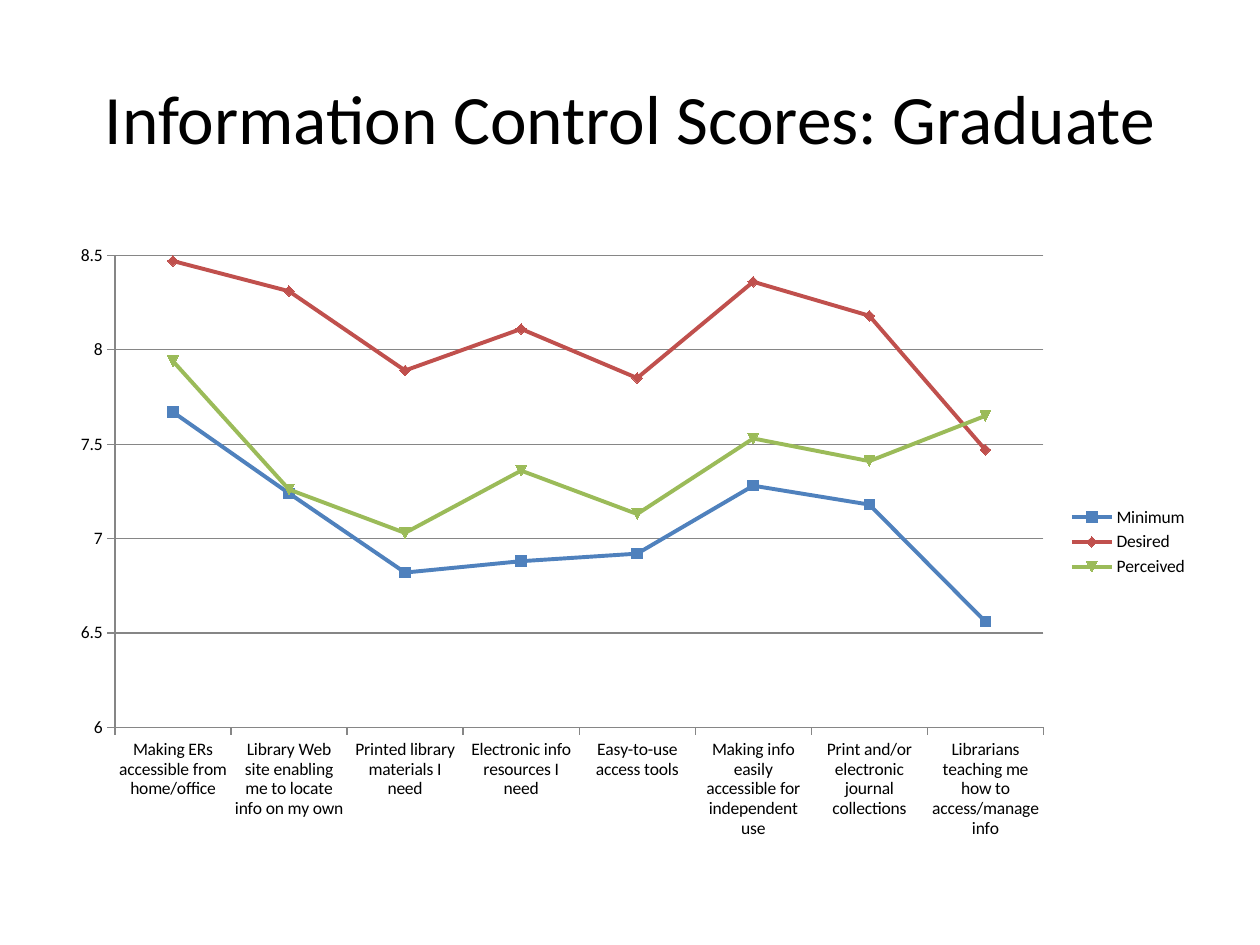
from pptx import Presentation
from pptx.chart.data import CategoryChartData
from pptx.dml.color import RGBColor
from pptx.enum.chart import XL_CHART_TYPE as ChartType
from pptx.enum.chart import XL_LEGEND_POSITION as LegendPosition
from pptx.enum.chart import XL_TICK_MARK as TickMark
from pptx.enum.text import MSO_ANCHOR as Anchor
from pptx.enum.text import PP_ALIGN as Align
from pptx.util import Cm, Pt

COLOURS = {
    "text": "000000",
    "axis": "868686",
    "Minimum": "4F81BD",
    "Desired": "C0504D",
    "Perceived": "9BBB59",
}
CATEGORIES = [
    "Making ERs accessible from home/office",
    "Library Web site enabling me to locate info on my own",
    "Printed library materials I need",
    "Electronic info resources I need",
    "Easy-to-use access tools",
    "Making info easily accessible for independent use",
    "Print and/or electronic journal collections",
    "Librarians teaching me how to access/manage info",
]
SCORES = {
    "Minimum": [7.67, 7.24, 6.82, 6.88, 6.92, 7.28, 7.18, 6.56],
    "Desired": [8.47, 8.31, 7.89, 8.11, 7.85, 8.36, 8.18, 7.47],
    "Perceived": [7.94, 7.26, 7.03, 7.36, 7.13, 7.53, 7.41, 7.65],
}


def colour(name):
    """Return the named colour."""
    return RGBColor.from_string(COLOURS[name])


def set_values(target, values):
    """Set each attribute of the target from a dict."""
    for name, value in values.items():
        setattr(target, name, value)


def style_font(font, size):
    """Give a font the slide's typeface and text colour."""
    set_values(font, {"name": "Calibri", "size": Pt(size)})
    font.color.rgb = colour("text")


def style_line(line, name, width):
    """Give a line its colour and width."""
    line.color.rgb = colour(name)
    line.width = Pt(width)


def fill_title(title, text):
    """Place the title placeholder and write its text."""
    set_values(title, {"left": Cm(1.27), "top": Cm(0.76),
                       "width": Cm(22.86), "height": Cm(3.18)})
    frame = title.text_frame
    set_values(frame, {"text": text, "word_wrap": True,
                       "vertical_anchor": Anchor.MIDDLE})
    para = frame.paragraphs[0]
    para.alignment = Align.CENTER
    style_font(para.runs[0].font, 39.6)


def style_axes(chart):
    """Set the score scale, gridlines and tick marks."""
    set_values(chart.value_axis, {
        "minimum_scale": 6, "maximum_scale": 8.5, "major_unit": 0.5,
        "has_major_gridlines": True})
    style_line(chart.value_axis.major_gridlines.format.line, "axis", 0.75)
    for axis in (chart.category_axis, chart.value_axis):
        axis.major_tick_mark = TickMark.OUTSIDE
        style_line(axis.format.line, "axis", 0.75)


def style_series(series):
    """Colour a score line and its markers."""
    series.smooth = False
    style_line(series.format.line, series.name, 2.25)
    series.marker.size = 6
    marker = series.marker.format
    marker.fill.solid()
    marker.fill.fore_color.rgb = colour(series.name)
    style_line(marker.line, series.name, 0.75)


def add_score_chart(page):
    """Add the line chart of the three score levels."""
    data = CategoryChartData()
    data.categories = CATEGORIES
    for name, scores in SCORES.items():
        data.add_series(name, scores)
    chart = page.shapes.add_chart(
        ChartType.LINE_MARKERS, Cm(1.17), Cm(4.7), Cm(23.04), Cm(12.45), data
    ).chart
    set_values(chart, {"has_title": False, "has_legend": True})
    set_values(chart.legend, {"position": LegendPosition.RIGHT,
                              "include_in_layout": False})
    style_font(chart.font, 10)
    style_axes(chart)
    chart.plots[0].vary_by_categories = False
    for series in chart.plots[0].series:
        style_series(series)


def main():
    """Build and save the slide."""
    deck = Presentation()
    set_values(deck, {"slide_width": Cm(25.4), "slide_height": Cm(19.05)})
    page = deck.slides.add_slide(deck.slide_layouts.get_by_name("Title Only"))
    fill_title(page.shapes.title, "Information Control Scores: Graduate")
    add_score_chart(page)
    deck.save("out.pptx")


if __name__ == "__main__":
    main()
